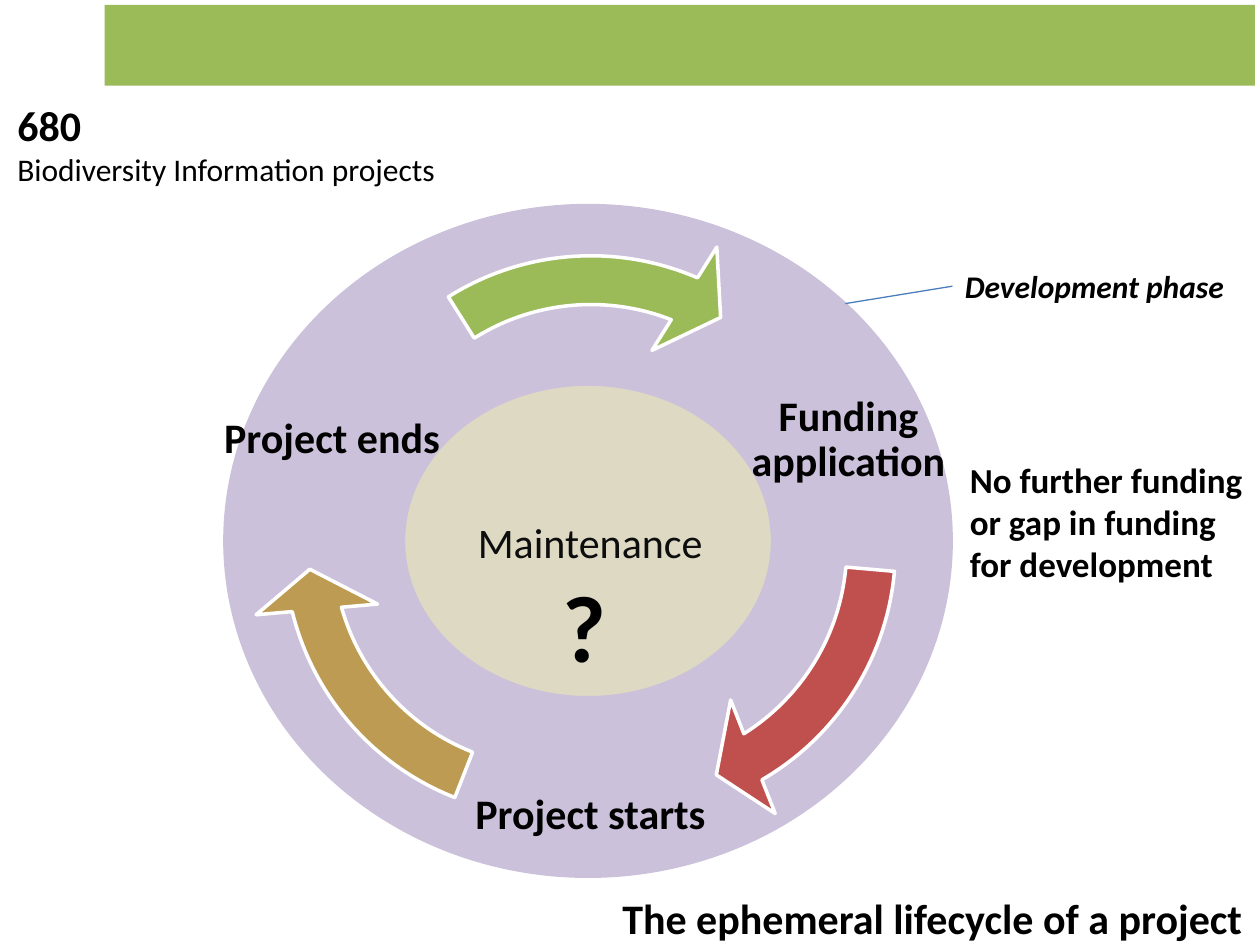
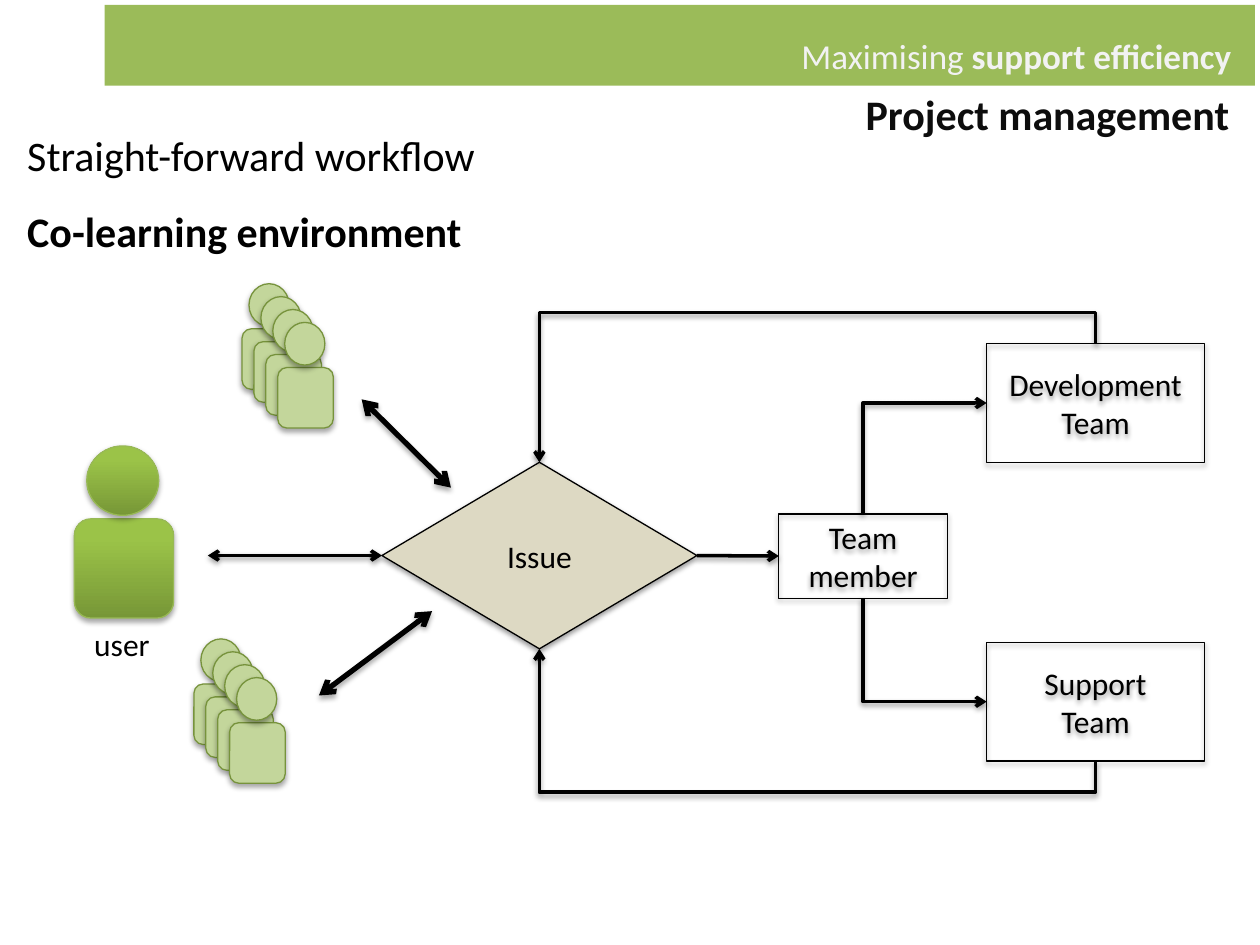
"""Build two slides on the project lifecycle and the support workflow."""
from lxml.etree import SubElement
from pptx import Presentation
from pptx.dml.color import RGBColor
from pptx.enum.shapes import MSO_CONNECTOR, MSO_SHAPE
from pptx.enum.text import MSO_ANCHOR, MSO_AUTO_SIZE, PP_ALIGN
from pptx.oxml.ns import qn
from pptx.util import Cm, Pt

FONT = "Calibri"
COLORS = {
    "black": "000000", "ink": "0D0D0D", "white": "FFFFFF", "pale": "F2F2F2",
    "green": "9BBB59", "red": "C0504D", "ochre": "BD9B53", "sand": "DDD9C3",
    "lilac": "CCC1DA", "blue": "4B7EBC", "crowd": "C3D69B", "crowd edge": "77933C",
    "user dark": "779737", "user light": "9BC348", "user edge": "98B955",
}

BAND = (2.11, 0.1, 23.19, 1.63)

LIFECYCLE_TITLE = ("The ephemeral lifecycle of a project", (12.29, 17.86, 13.13, 1.27))
CORE = (8.13, 7.65, 7.54, 6.53)
RING = (4.5, 4.11, 14.71, 13.59)
ARROW_SIZE = 12.29
CYCLE_ARROWS = [
    ("ochre", 5.0, 4.9, 165.37, 111.43),
    ("red", 6.5, 4.9, 58.97, 5.03),
    ("green", 5.77, 4.42, 292.52, 237.88),
]
STAGE_SIZE = 5.21
STAGES = [
    ("Funding application", 14.5, 6.27),
    ("Project starts", 9.3, 13.84),
    ("Project ends", 4.09, 6.27),
]
LIFECYCLE_NOTES = [
    ((19.3, 9.12, 6.22, 2.82), 20,
     ["No further funding", "or gap in funding", "for development"]),
    ((11.1, 11.33, 1.4, 2.57), 54, ["?"]),
]
PHASE_NOTE = ("Development phase", (19.2, 5.26, 5.79, 1.02))
PHASE_LINE = ((17.04, 6.12), (19.2, 5.77))
PROJECT_COUNT = (["680", "Biodiversity Information projects"], (0.1, 1.88, 9.02, 2.06))

WORKFLOW_TITLE = ("Maximising", " support efficiency", (15.9, 0.56, 9.4, 1.12))
SUBTITLE = ("Project management", (17.2, 1.65, 7.92, 1.27))
POINTS = (["Straight-forward workflow", "Co-learning environment"], (0.3, 1.98, 9.65, 3.33))
USER_LABEL = ("user", (1.65, 12.47, 1.65, 1.02))
STEPS = {
    "issue": (["Issue"], MSO_SHAPE.FLOWCHART_DECISION, (7.7, 9.32, 6.35, 3.76), "sand"),
    "development": (["Development Team"], MSO_SHAPE.RECTANGLE, (19.89, 6.93, 4.39, 2.39), None),
    "support": (["Support", "Team"], MSO_SHAPE.RECTANGLE, (19.89, 12.95, 4.39, 2.39), None),
    "member": (["Team member"], MSO_SHAPE.RECTANGLE, (15.7, 10.36, 3.4, 1.7), None),
}
ELBOWS = [
    ("member", "top", "development", "left", 0),
    ("member", "bottom", "support", "left", 0),
    ("development", "top", "issue", "top", 0.63),
    ("support", "bottom", "issue", "bottom", 0.63),
]
USER_LINE_START = (4.19, 11.2)
CROWD_LINES = [((6.43, 14.02), (8.71, 12.32)), ((7.29, 8.05), (9.09, 9.83))]
USER = {"at": (1.5, 10.46), "body": (2.0, 2.0), "head": (1.45, 1.4), "shift": (0.25, -1.47)}
CROWDS = [(3.91, 13.79), (4.88, 6.63)]
CROWD_COUNT = 4
CROWD_STEP = (0.24, 0.26)
MEMBER = {"body": (1.12, 1.22), "head": (0.81, 0.86), "shift": (0.14, -0.91)}


def color(name):
    return RGBColor.from_string(COLORS[name])


def lengths(values):
    return [Cm(value) for value in values]


def cast_shadow(effects, alpha=38, distance=1.6):
    shadow = SubElement(effects, qn("a:outerShdw"), blurRad=str(Pt(3.1)),
                        dist=str(Pt(distance)), dir="5400000", rotWithShape="0")
    black = SubElement(shadow, qn("a:srgbClr"), val=COLORS["black"])
    SubElement(black, qn("a:alpha"), val=str(alpha * 1000))


def add_form(page, kind, bounds, fill=None, edge=None, width=0.75, shadow=None):
    form = page.shapes.add_shape(kind, *lengths(bounds))
    form.shadow.inherit = False
    if fill:
        form.fill.solid()
        form.fill.fore_color.rgb = color(fill)
    else:
        form.fill.background()
    if edge:
        form.line.color.rgb = color(edge)
        form.line.width = Pt(width)
    else:
        form.line.fill.background()
    if shadow:
        cast_shadow(form.element.spPr.find(qn("a:effectLst")), *shadow)
    return form


def write(shape, texts, size, ink="black", bold=False, italic=False,
          align=PP_ALIGN.LEFT, spacing=None):
    frame = shape.text_frame
    frame.text = "\n".join(texts)
    for para in frame.paragraphs:
        para.alignment = align
        para.line_spacing = spacing
        para.font.name = FONT
        para.font.size = Pt(size)
        para.font.bold = bold
        para.font.italic = italic
        para.font.color.rgb = color(ink)
    return frame


def fit(frame):
    frame.word_wrap = False
    frame.auto_size = MSO_AUTO_SIZE.SHAPE_TO_FIT_TEXT
    frame.vertical_anchor = MSO_ANCHOR.TOP


def add_note(page, texts, bounds, size, **style):
    box = page.shapes.add_textbox(*lengths(bounds))
    frame = write(box, texts, size, **style)
    fit(frame)
    return frame


def set_title(page, text, bounds, size, **style):
    title = page.shapes.title
    title.left, title.top, title.width, title.height = lengths(bounds)
    frame = write(title, [text], size, **style)
    fit(frame)
    return frame.paragraphs[0]


def add_line(page, start, end, ink="black", width=2, ends=("tailEnd",),
             shadow=(38, 1.6), kind=MSO_CONNECTOR.STRAIGHT):
    line = page.shapes.add_connector(kind, *lengths(start + end))
    line.line.color.rgb = color(ink)
    line.line.width = Pt(width)
    properties = line.element.spPr
    for tip in ends:
        SubElement(properties.find(qn("a:ln")), qn(f"a:{tip}"), type="arrow")
    effects = SubElement(properties, qn("a:effectLst"))
    if shadow:
        cast_shadow(effects, *shadow)
    return line


def add_elbow(page, start, end, overshoot):
    """Draw a bent arrow that leaves its start vertically."""
    across, down = end[0] - start[0], end[1] - start[1]
    middle_x, middle_y = (start[0] + end[0]) / 2, (start[1] + end[1]) / 2
    half_width = abs(down) / 2
    half_height = abs(across) / 2 * (1 if (across > 0) == (down < 0) else -1)
    line = add_line(page, (middle_x + half_width, middle_y + half_height),
                    (middle_x - half_width, middle_y - half_height),
                    kind=MSO_CONNECTOR.ELBOW)
    properties = line.element.spPr
    turn = 90 if down < 0 else 270
    properties.find(qn("a:xfrm")).set("rot", str(turn * 60000))
    geometry = properties.find(qn("a:prstGeom"))
    if overshoot:
        share = round(-overshoot / abs(down) * 100000)
        SubElement(geometry.find(qn("a:avLst")), qn("a:gd"), name="adj1", fmla=f"val {share}")
    else:
        geometry.set("prst", "bentConnector2")


def side_of(step, side):
    left, top, width, height = STEPS[step][2]
    return {
        "top": (left + width / 2, top),
        "bottom": (left + width / 2, top + height),
        "left": (left, top + height / 2),
        "right": (left + width, top + height / 2),
    }[side]


def add_person(page, at, person, fill, edge):
    head_at = tuple(place + shift for place, shift in zip(at, person["shift"]))
    return [
        add_form(page, kind, corner + person[part], fill, edge, shadow=(35, 1.8))
        for kind, corner, part in ((MSO_SHAPE.ROUNDED_RECTANGLE, at, "body"),
                                   (MSO_SHAPE.OVAL, head_at, "head"))
    ]


def put_band_on_layout(page):
    band = add_form(page, MSO_SHAPE.RECTANGLE, BAND, "green")
    band.element.nvSpPr.cNvPr.set("id", "20")
    page.slide_layout.shapes.element.append(band.element)


def build_lifecycle(page):
    text, bounds = LIFECYCLE_TITLE
    set_title(page, text, bounds, 24, bold=True)
    core = add_form(page, MSO_SHAPE.OVAL, CORE, "sand", "sand", 2)
    write(core, ["Maintenance"], 24, "ink", align=PP_ALIGN.CENTER)
    ring = add_form(page, MSO_SHAPE.DONUT, RING, "lilac")
    ring.adjustments[0] = 0.27
    for fill, left, top, head_angle, start_angle in CYCLE_ARROWS:
        arrow = add_form(page, MSO_SHAPE.CIRCULAR_ARROW,
                         (left, top, ARROW_SIZE, ARROW_SIZE), fill, "white", 2)
        settings = (0.08, 9.6 * 0.6, head_angle * 0.6, start_angle * 0.6, 0.1)
        for index, value in enumerate(settings):
            arrow.adjustments[index] = value
    for text, left, top in STAGES:
        box = page.shapes.add_textbox(*lengths((left, top, STAGE_SIZE, STAGE_SIZE)))
        frame = write(box, [text], 24, bold=True, align=PP_ALIGN.CENTER, spacing=0.9)
        frame.word_wrap = True
        frame.vertical_anchor = MSO_ANCHOR.MIDDLE
        frame.margin_left = frame.margin_right = Cm(0.1)
        frame.margin_top = frame.margin_bottom = Cm(0.1)
    for bounds, size, texts in LIFECYCLE_NOTES:
        add_note(page, texts, bounds, size, bold=True)
    text, bounds = PHASE_NOTE
    add_note(page, [text], bounds, 18, bold=True, italic=True)
    add_line(page, *PHASE_LINE, ink="blue", width=0.75, ends=(), shadow=None)
    count = add_note(page, *PROJECT_COUNT, 18)
    count.paragraphs[0].font.size = Pt(24)
    count.paragraphs[0].font.bold = True


def build_workflow(page):
    lead, stress, bounds = WORKFLOW_TITLE
    title = set_title(page, lead, bounds, 20, ink="pale", bold=None)
    span = title.add_run()
    span.text = stress
    span.font.bold = True
    text, bounds = SUBTITLE
    add_note(page, [text], bounds, 24, ink="ink", bold=True)
    points = add_note(page, *POINTS, 24, spacing=1.5)
    points.paragraphs[1].font.bold = True
    for texts, kind, bounds, fill in STEPS.values():
        step = add_form(page, kind, bounds, fill, "black", shadow=(38, 1.6))
        write(step, texts, 18, align=PP_ALIGN.CENTER)
    for origin, leave, target, enter, overshoot in ELBOWS:
        add_elbow(page, side_of(origin, leave), side_of(target, enter), overshoot)
    both = ("headEnd", "tailEnd")
    add_line(page, side_of("issue", "right"), side_of("member", "left"))
    add_line(page, USER_LINE_START, side_of("issue", "left"), ends=both)
    for start, end in CROWD_LINES:
        add_line(page, start, end, width=3, ends=both, shadow=(35, 1.8))
    for part in add_person(page, USER["at"], USER, "user light", "user edge"):
        part.fill.gradient()
        part.fill.gradient_angle = 90
        dark, light = part.fill.gradient_stops
        dark.color.rgb = color("user dark")
        light.color.rgb = color("user light")
        light.position = 0.8
    text, bounds = USER_LABEL
    add_note(page, [text], bounds, 18)
    for left, top in CROWDS:
        for index in range(CROWD_COUNT):
            at = (left + index * CROWD_STEP[0], top + index * CROWD_STEP[1])
            add_person(page, at, MEMBER, "crowd", "crowd edge")


def main():
    deck = Presentation()
    deck.slide_width, deck.slide_height = Cm(25.4), Cm(19.05)
    layout = deck.slide_layouts[5]
    lifecycle, workflow = (deck.slides.add_slide(layout) for _ in range(2))
    put_band_on_layout(lifecycle)
    build_lifecycle(lifecycle)
    build_workflow(workflow)
    deck.save("out.pptx")


if __name__ == "__main__":
    main()
